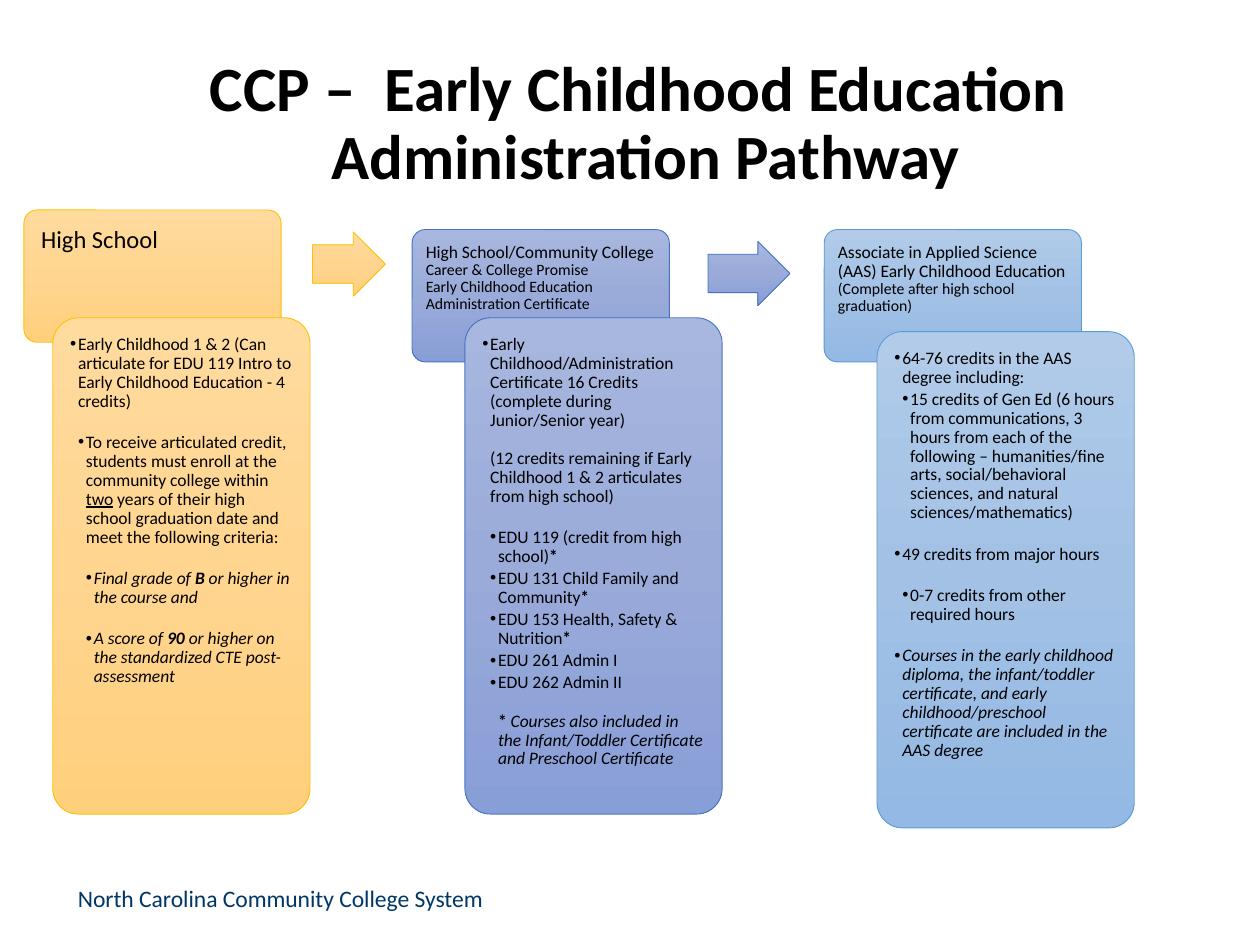
from dataclasses import dataclass

from lxml.etree import SubElement
from pptx import Presentation
from pptx.dml.color import RGBColor
from pptx.enum.shapes import MSO_SHAPE as Kind
from pptx.enum.text import MSO_ANCHOR as Anchor, MSO_AUTO_SIZE as Fit, PP_ALIGN as Align
from pptx.oxml import parse_xml
from pptx.oxml.ns import nsdecls, qn
from pptx.util import Pt

FACE = "Calibri"
WIDE, HEAD_H, LIST_H = 147, 75.6, 283.6
LEFT, STEP, INSET = 30.2, 235.5, 4.3
LINE, NEAR = 11, 1.8      # height of an empty line, usual space after an item
FAR = LINE + NEAR


@dataclass
class Tone:
    line: str
    stops: tuple[str, str, str]


@dataclass
class Item:
    level: int
    runs: list[tuple[str, str]]    # text and style letters: b, i, u
    after: float = NEAR
    mark: bool = True


@dataclass
class Stage:
    tone: Tone
    x: float
    y: float
    pad: float
    head: list[tuple[str, float]]  # text and size
    top: float
    items: list[Item]


@dataclass
class Arrow:
    tone: Tone
    x: float
    y: float
    w: float


def color(code: str) -> RGBColor:
    return RGBColor.from_string(code)


def style(par, size: float, code: str = "000000", bold: bool = False) -> None:
    font = par.font
    font.name, font.size, font.bold = FACE, Pt(size), bold
    font.color.rgb = color(code)


def setup(frame, pad: float, low: float, anchor=Anchor.TOP) -> None:
    frame.word_wrap, frame.auto_size = True, Fit.NONE
    frame.vertical_anchor = anchor
    frame.margin_left = frame.margin_top = frame.margin_right = Pt(pad)
    frame.margin_bottom = Pt(low)


def place(shape, x: float, y: float, w: float, h: float) -> None:
    shape.left, shape.top, shape.width, shape.height = Pt(x), Pt(y), Pt(w), Pt(h)


def draw(kind, tone: Tone, x: float, y: float, w: float, h: float, adj: list[float]):
    shape = slide.shapes.add_shape(kind, Pt(x), Pt(y), Pt(w), Pt(h))
    shape.shadow.inherit = False
    for i, part in enumerate(adj):
        shape.adjustments[i] = part
    shape.line.color.rgb, shape.line.width = color(tone.line), Pt(0.5)
    # Three-stop gradient running downwards
    stops = "".join(f'<a:gs pos="{i * 50000}"><a:srgbClr val="{c}"/></a:gs>'
                    for i, c in enumerate(tone.stops))
    grad = parse_xml(f'<a:gradFill {nsdecls("a")} rotWithShape="1"><a:gsLst>{stops}'
                     '</a:gsLst><a:lin ang="5400000" scaled="0"/></a:gradFill>')
    shape._element.spPr.find(qn("a:prstGeom")).addnext(grad)
    return shape


def write(frame, items: list[Item]) -> None:
    for i, item in enumerate(items):
        par = frame.paragraphs[0] if i == 0 else frame.add_paragraph()
        par.level = item.level
        par.line_spacing = 0.9
        par.space_before, par.space_after = Pt(0), Pt(item.after)
        par.alignment = Align.LEFT
        props = par._p.get_or_add_pPr()
        props.set("marL", str(Pt(4.5 * item.level)))
        props.set("indent", str(Pt(-4.5 if item.mark else 0)))
        if item.mark:
            SubElement(props, qn("a:buChar")).set("char", "•")
        else:
            SubElement(props, qn("a:buNone"))
        style(par, 10)
        for text, look in item.runs:
            for j, line in enumerate(text.split("\n")):
                if j:
                    par.add_line_break()
                run = par.add_run()
                run.text = line
                if "b" in look:
                    run.font.bold = True
                if "i" in look:
                    run.font.italic = True
                if "u" in look:
                    run.font.underline = True


def panel(stage: Stage, col: int, body) -> None:
    head = draw(Kind.ROUNDED_RECTANGLE, stage.tone, stage.x, stage.y, WIDE, HEAD_H, [0.1])
    frame = head.text_frame
    setup(frame, stage.pad, 4)
    for i, (text, size) in enumerate(stage.head):
        par = frame.paragraphs[0] if i == 0 else frame.add_paragraph()
        par.text, par.alignment, par.line_spacing = text, Align.LEFT, 0.9
        style(par, size)
    x = LEFT + STEP * col
    draw(Kind.ROUNDED_RECTANGLE, stage.tone, x, stage.top, WIDE, LIST_H, [0.1])
    # The list lies above its panel
    place(body, x + INSET, stage.top + INSET, WIDE - 2 * INSET, LIST_H - 2 * INSET)
    slide.shapes._spTree.append(body._element)
    setup(body.text_frame, 5.6, 5.6)
    write(body.text_frame, stage.items)


GOLD = Tone("FFC000", ("FFDB9E", "FFD590", "FFD07C"))
BLUE = Tone("4472C4", ("A8B7DF", "9AABD9", "889ED7"))
SKY = Tone("5B9BD5", ("B1CBE9", "A3C1E5", "93B9E4"))

STAGES = [
    Stage(GOLD, 13.7, 120, 7.6, [("High School", 14)], 181.6, [
        Item(1, [("Early Childhood 1 & 2 (Can articulate for EDU 119 Intro to Early "
                  "Childhood Education - 4 credits)", "")], FAR),
        Item(2, [("To receive articulated credit, students must enroll at the community "
                  "college within ", ""), ("two", "u"),
                 (" years of their high school graduation date and meet the following "
                  "criteria:", "")], FAR),
        Item(3, [("Final grade of ", "i"), ("B ", "bi"),
                 ("or higher in the course and", "i")], FAR),
        Item(3, [("A score of ", "i"), ("90 ", "bi"),
                 ("or higher on the standardized CTE post-assessment", "i")]),
    ]),
    Stage(BLUE, 235.5, 131.2, 5.6, [
        ("High School/Community College", 10), ("Career & College Promise", 9),
        ("Early Childhood Education Administration Certificate", 9)], 181.6, [
        Item(1, [("Early Childhood/Administration Certificate 16 Credits\n"
                  "(complete during Junior/Senior year)", "")], LINE),
        Item(1, [("(12 credits remaining if Early Childhood 1 & 2 articulates from "
                  "high school)", "")], FAR, False),
        Item(2, [("EDU 119 (credit from high school)", ""), ("*", "b")]),
        Item(2, [("EDU 131 Child Family and Community", ""), ("*", "b")]),
        Item(2, [("EDU 153 Health, Safety & Nutrition", ""), ("*", "b")]),
        Item(2, [("EDU 261 Admin I", "")]),
        Item(2, [("EDU 262 Admin II", "")], LINE),
        Item(2, [("* ", "b"), ("Courses also included in the Infant/Toddler Certificate "
                               "and Preschool Certificate", "i")], NEAR, False),
    ]),
    Stage(SKY, 471, 131.2, 5.6, [
        ("Associate in Applied Science (AAS) Early Childhood Education", 10),
        ("(Complete after high school graduation)", 9)], 189.5, [
        Item(1, [("64-76 credits in the AAS degree including:", "")]),
        Item(2, [("15 credits of Gen Ed (6 hours from communications, 3 hours from each "
                  "of the following – humanities/fine arts, social/behavioral sciences, "
                  "and natural sciences/mathematics)", "")], FAR),
        Item(1, [("49 credits from major hours", "")], FAR),
        Item(2, [("0-7 credits from other required hours", "")], FAR),
        Item(1, [("Courses in the early childhood diploma, the infant/toddler certificate, "
                  "and early childhood/preschool certificate are included in the AAS "
                  "degree", "i")]),
    ]),
]
ARROWS = [Arrow(GOLD, 178.6, 132.6, 41.6), Arrow(BLUE, 404.6, 138, 46.8)]

deck = Presentation()
deck.slide_width, deck.slide_height = Pt(720), Pt(540)
slide = deck.slides.add_slide(deck.slide_layouts[4])

# Title
title = slide.shapes.title
place(title, 36, 36, 666, 70.6)
setup(title.text_frame, 3.6, 3.6, Anchor.MIDDLE)
par = title.text_frame.paragraphs[0]
par.text = "CCP –  Early Childhood Education \vAdministration Pathway"
par.alignment, par.line_spacing = Align.CENTER, 0.9
style(par, 36, bold=True)

# Stages and the arrows between them
spare, *bodies = [p for p in slide.placeholders if p.placeholder_format.idx > 0]
spare._element.getparent().remove(spare._element)
for col, (stage, body) in enumerate(zip(STAGES, bodies)):
    panel(stage, col, body)
for arrow in ARROWS:
    draw(Kind.RIGHT_ARROW, arrow.tone, arrow.x, arrow.y, arrow.w, 36.6, [0.6, 0.5])

# Footer
foot = slide.shapes.add_textbox(Pt(37.4), Pt(501.8), Pt(255.6), Pt(28.8))
foot.text_frame.word_wrap = True
par = foot.text_frame.paragraphs[0]
par.text = "North Carolina Community College System"
style(par, 13.5, "003767")

deck.save("out.pptx")
